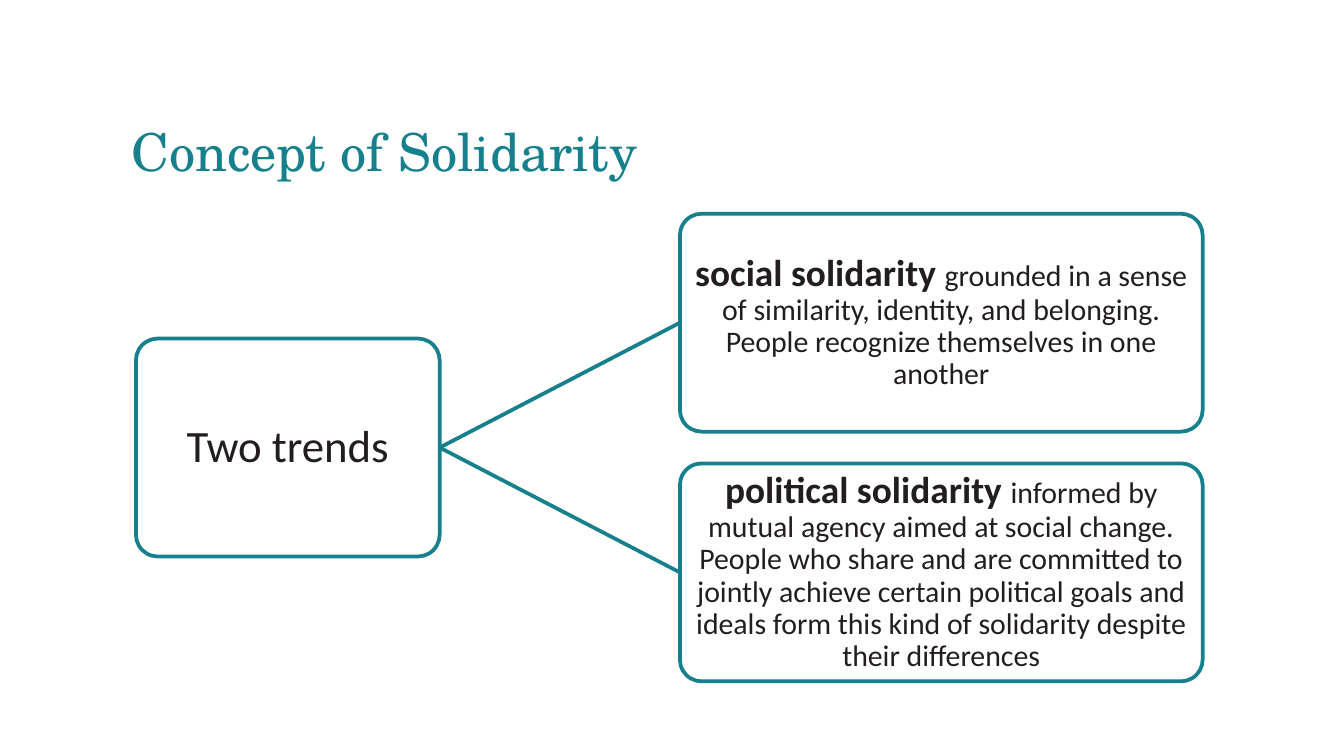
from lxml.etree import SubElement
from pptx import Presentation
from pptx.dml.color import RGBColor
from pptx.enum.shapes import MSO_CONNECTOR as Connector, MSO_SHAPE as Shape
from pptx.enum.text import MSO_ANCHOR as Anchor, MSO_AUTO_SIZE as AutoSize, PP_ALIGN as Align
from pptx.oxml.ns import qn
from pptx.util import Cm, Pt

# Content: each text is a list of (words, size, bold)
TITLE = [("Concept of Solidarity", 28, False)]
ROOT = [("Two trends", 24, False)]
BRANCHES = [
    [("social solidarity ", 20, True),
     ("grounded in a sense of similarity, identity, and belonging. "
      "People recognize themselves in one another", 16, False)],
    [("political solidarity ", 20, True),
     ("informed by mutual agency aimed at social change. People who share "
      "and are committed to jointly achieve certain political goals and "
      "ideals form this kind of solidarity despite their differences", 16, False)],
]

# Look and layout, lengths in centimetres
TEAL, INK = "16818D", "221E1F"
LINE_WIDTH = Pt(2)
ROOT_LEFT, ROOT_WIDTH = 2.57, 5.74
BRANCH_LEFT, BRANCH_WIDTH = 12.85, 9.88
BRANCH_TOP, BOX_HEIGHT, GAP = 4.04, 4.12, 0.6


def paint(color_format, hex_color):
    color_format.rgb = RGBColor.from_string(hex_color)


def write(shape, spans, *, font="Calibri", color=INK, align=Align.CENTER,
          anchor=Anchor.MIDDLE, spacing=0.9, inset=0.15):
    frame = shape.text_frame
    frame.word_wrap = True
    frame.auto_size = AutoSize.NONE
    frame.vertical_anchor = anchor
    frame.margin_left = frame.margin_right = Cm(inset)
    frame.margin_top = frame.margin_bottom = Cm(inset)
    para = frame.paragraphs[0]
    para.alignment = align
    para.line_spacing = spacing
    for words, size, bold in spans:
        span = para.add_run()
        span.text = words
        span.font.name = font
        span.font.size = Pt(size)
        span.font.bold = bold
        paint(span.font.color, color)


def add_box(slide, left, top, width, spans):
    box = slide.shapes.add_shape(Shape.ROUNDED_RECTANGLE, Cm(left), Cm(top),
                                 Cm(width), Cm(BOX_HEIGHT))
    box.adjustments[0] = 0.1
    box.shadow.inherit = False
    box.fill.background()
    paint(box.line.color, TEAL)
    box.line.width = LINE_WIDTH
    write(box, spans)
    return box


def join(slide, start, end):
    link = slide.shapes.add_connector(Connector.STRAIGHT, 0, 0, 0, 0)
    link.begin_connect(start, 3)
    link.end_connect(end, 1)
    paint(link.line.color, TEAL)
    link.line.width = LINE_WIDTH
    SubElement(link._element.spPr, qn("a:effectLst"))


def main():
    deck = Presentation()
    deck.slide_width, deck.slide_height = Cm(25.4), Cm(14.29)
    page = deck.slides.add_slide(deck.slide_layouts[5])

    # Title
    title = page.shapes.title
    title.left, title.top = Cm(2.49), Cm(1.96)
    title.width, title.height = Cm(18.52), Cm(1.35)
    write(title, TITLE, font="TeX Gyre Schola", color=TEAL, align=Align.LEFT,
          anchor=Anchor.TOP, spacing=Pt(42), inset=0)

    # Root box, centred on the stack of branches
    step = BOX_HEIGHT + GAP
    root_top = BRANCH_TOP + step * (len(BRANCHES) - 1) / 2
    root = add_box(page, ROOT_LEFT, root_top, ROOT_WIDTH, ROOT)

    # Branches, each joined to the root
    for row, spans in enumerate(BRANCHES):
        branch = add_box(page, BRANCH_LEFT, BRANCH_TOP + row * step, BRANCH_WIDTH, spans)
        join(page, root, branch)

    deck.save("out.pptx")


if __name__ == "__main__":
    main()
